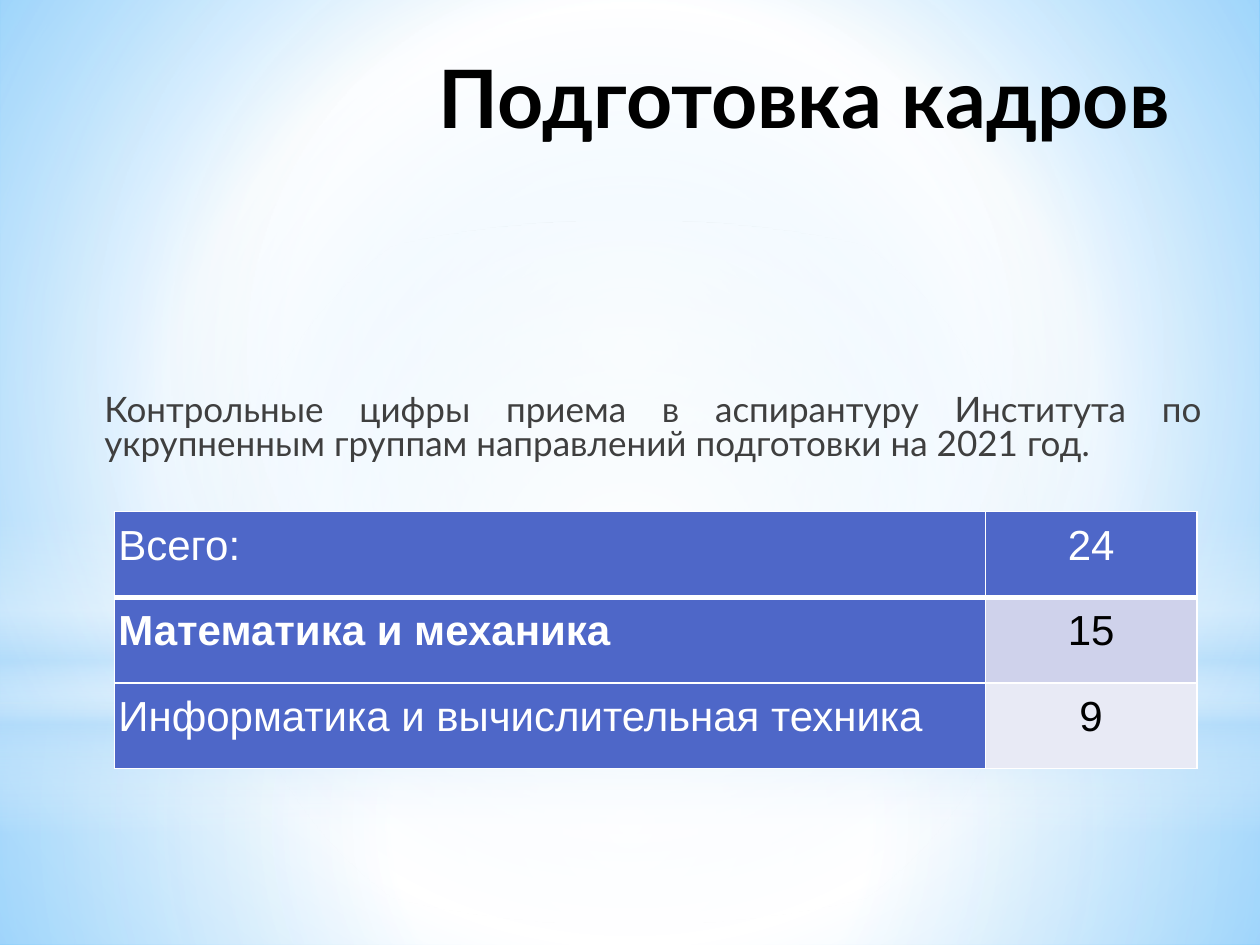
from lxml import etree
from pptx import Presentation
from pptx.dml.color import RGBColor
from pptx.enum.shapes import MSO_SHAPE
from pptx.enum.text import PP_ALIGN
from pptx.oxml.ns import qn
from pptx.util import Inches, Pt

RECT, OVAL = MSO_SHAPE.RECTANGLE, MSO_SHAPE.OVAL
LEFT, MID, RIGHT, FULL = PP_ALIGN.LEFT, PP_ALIGN.CENTER, PP_ALIGN.RIGHT, PP_ALIGN.JUSTIFY
WHITE, SKY, BLUE, BLACK = "FFFFFF", "B4DCFA", "4E67C8", "000000"

ROWS = [
    ("Всего:", "24", False, BLUE, WHITE),
    ("Математика и механика", "15", True, "CFD2EB", BLACK),
    ("Информатика и вычислительная техника", "9", False, "E8EAF5", BLACK),
]


def color(code):
    """Turn a hex string into a colour."""
    return RGBColor.from_string(code)


def sub(node, tag, **attrs):
    """Add a child element with the given attributes."""
    return etree.SubElement(node, qn(tag), {k: str(v) for k, v in attrs.items()})


def blend(fill, root, stops, angle=None):
    """Give a fill gradient stops of position, colour and opacity."""
    fill.gradient()
    grad = next(root.iter(qn("a:gradFill")))
    for node in list(grad):
        grad.remove(node)
    items = sub(grad, "a:gsLst")
    for place, code, alpha in stops:
        stop = sub(items, "a:gs", pos=place * 1000)
        tint = sub(stop, "a:srgbClr", val=code)
        if alpha < 100:
            sub(tint, "a:alpha", val=alpha * 1000)
    if angle is None:
        ring = sub(grad, "a:path", path="circle")
        sub(ring, "a:fillToRect", l=50000, t=50000, r=50000, b=50000)
    else:
        sub(grad, "a:lin", ang=angle * 60000, scaled=0)


def glow(slide, kind, top, height, stops, angle=None):
    """Add a full-width gradient shape."""
    shape = slide.shapes.add_shape(kind, 0, Inches(top), Inches(10), Inches(height))
    shape.shadow.inherit = False
    shape.line.fill.background()
    blend(shape.fill, shape.element, stops, angle)


def write(frame, text, size, font, code, bold=False, align=LEFT, space=1.0):
    """Write one paragraph as a single run."""
    frame.word_wrap = True
    para = frame.paragraphs[0]
    para.alignment, para.line_spacing = align, space
    run = para.add_run()
    run.text = text
    run.font.size, run.font.name, run.font.bold = Pt(size), font, bold
    run.font.color.rgb = color(code)


def label(slide, box, *args, **style):
    """Add a text box."""
    shape = slide.shapes.add_textbox(*map(Inches, box))
    write(shape.text_frame, *args, **style)


def border(cell, top, bottom):
    """Draw white cell borders, with widths in points."""
    props = cell._tc.get_or_add_tcPr()
    widths = {"L": 1, "R": 1, "T": top, "B": bottom}
    for side, width in widths.items():
        line = sub(props, f"a:ln{side}", w=Pt(width))
        sub(sub(line, "a:solidFill"), "a:srgbClr", val=WHITE)


def style(cell, row, text, fill, code, bold, align):
    """Format and fill one table cell."""
    cell.margin_left = cell.margin_right = Inches(0.03)
    cell.margin_top = cell.margin_bottom = Inches(0.03)
    border(cell, 3 if row == 1 else 1, 3 if row == 0 else 1)
    cell.fill.solid()
    cell.fill.fore_color.rgb = color(fill)
    write(cell.text_frame, text, 24, "Arial", code, bold, align, 1.15)


def quotas(slide):
    """Add the table of admission figures."""
    box = map(Inches, (0.91, 4.06, 8.59, 2.04))
    table = slide.shapes.add_table(len(ROWS), 2, *box).table
    table.first_row = table.horz_banding = False
    for col, width in zip(table.columns, (6.91, 1.68)):
        col.width = Inches(width)
    for i, (name, count, bold, fill, code) in enumerate(ROWS):
        table.rows[i].height = Inches(0.68)
        style(table.cell(i, 0), i, name, BLUE, WHITE, bold, LEFT)
        style(table.cell(i, 1), i, count, fill, code, False, MID)


def backdrop(slide):
    """Paint the background and its layers of light."""
    blend(slide.background.fill, slide.element,
          [(0, "99D4FE", 100), (60, WHITE, 100), (100, "54BDFF", 100)])
    glow(slide, RECT, 5.58, 1.92, [(0, WHITE, 90), (37, WHITE, 75), (100, SKY, 78)])
    glow(slide, RECT, 0, 5.58, [(0, WHITE, 87), (48, WHITE, 61), (100, SKY, 78)])
    glow(slide, RECT, 4.12, 2.5,
         [(0, WHITE, 0), (29, WHITE, 29), (45, SKY, 40),
          (55, WHITE, 25), (65, SKY, 60), (100, WHITE, 0)], 90)
    glow(slide, OVAL, 1.75, 5.58, [(0, WHITE, 100), (56, WHITE, 0), (100, WHITE, 0)])


def main():
    """Build the slide and save it."""
    deck = Presentation()
    deck.slide_width, deck.slide_height = Inches(10), Inches(7.5)
    slide = deck.slides.add_slide(deck.slide_layouts[6])
    backdrop(slide)
    label(slide, (2.64, 0.33, 6.74, 1.33), "Подготовка кадров",
          46, "Lato", BLACK, bold=True, align=RIGHT)
    label(slide, (0.73, 3.09, 8.91, 0.7),
          "Контрольные цифры приема в аспирантуру Института по "
          "укрупненным группам направлений подготовки на 2021 год.",
          20, "Lato", "3F3F3F", align=FULL, space=0.8)
    quotas(slide)
    deck.save("out.pptx")


if __name__ == "__main__":
    main()
